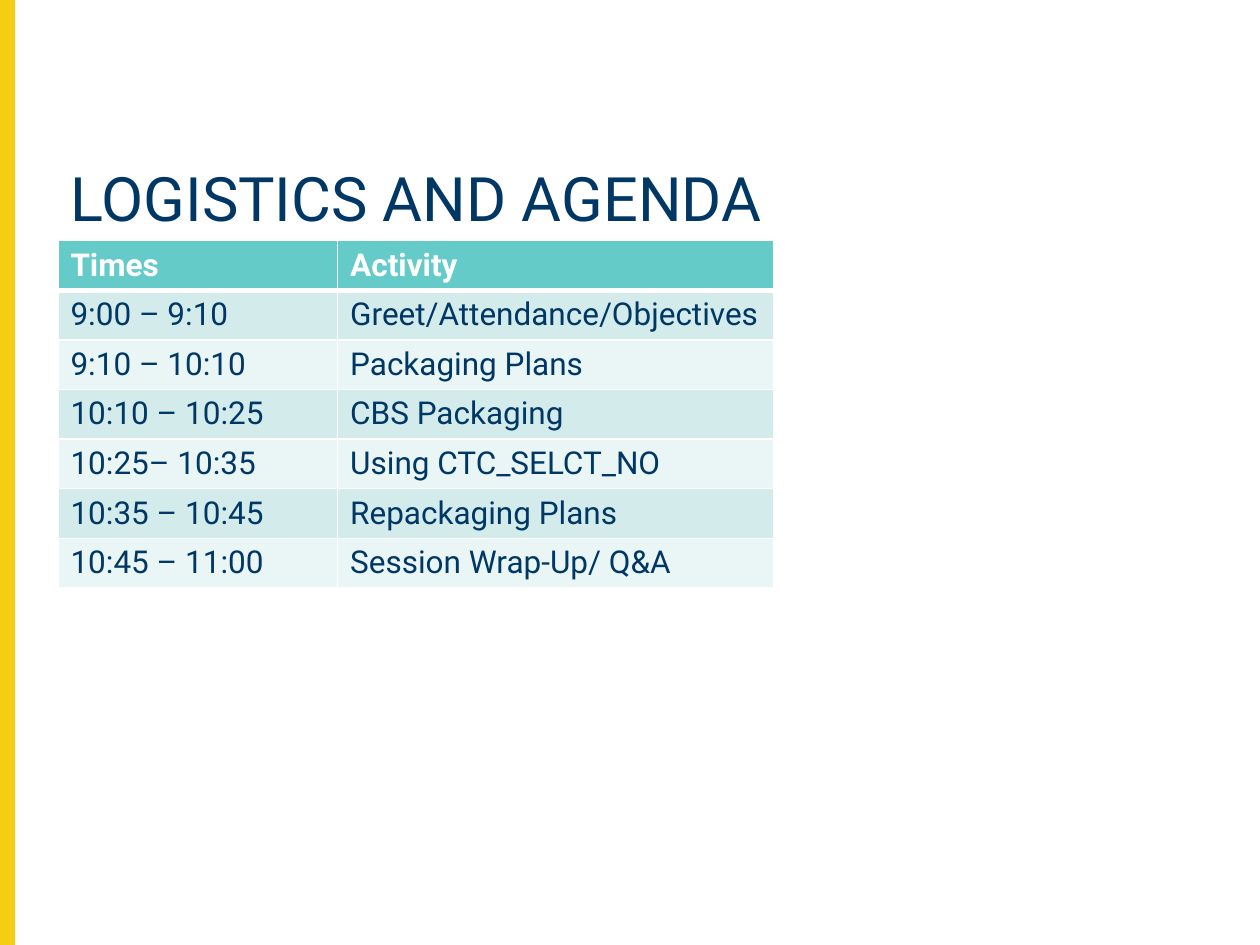
from dataclasses import dataclass

from lxml.etree import SubElement
from pptx import Presentation
from pptx.dml.color import RGBColor
from pptx.enum.shapes import MSO_SHAPE
from pptx.enum.text import MSO_ANCHOR, MSO_AUTO_SIZE, PP_ALIGN
from pptx.oxml.ns import qn
from pptx.util import Inches, Pt


@dataclass(frozen=True)
class Theme:
    """Colours, font and type sizes."""
    navy: str = "003764"
    gold: str = "F4CE12"
    teal: str = "65CBC9"
    white: str = "FFFFFF"
    bands: tuple = ("D3ECEB", "EAF6F5")
    font: str = "Roboto"
    head: int = 35
    body: int = 18


def apply(item, form):
    """Set each attribute of item named in form."""
    for key, value in form.items():
        setattr(item, key, value)


class Deck:
    """Holds the theme and the current slide."""

    def __init__(self, theme):
        """Start a deck with one title slide."""
        self.theme = theme
        self.show = Presentation()
        apply(self.show, {"slide_width": Inches(10), "slide_height": Inches(7.5)})
        self.slide = self.show.slides.add_slide(self.show.slide_layouts[5])

    def style(self, para, size, color, bold=False):
        """Format the text of a paragraph."""
        apply(para.font, {"name": self.theme.font, "size": Pt(size), "bold": bold})
        para.font.color.rgb = RGBColor.from_string(color)

    def bar(self, *box):
        """Draw the gold side bar."""
        bar = self.slide.shapes.add_shape(MSO_SHAPE.RECTANGLE, *map(Inches, box))
        gold = RGBColor.from_string(self.theme.gold)
        bar.shadow.inherit = False
        bar.fill.solid()
        bar.fill.fore_color.rgb = gold
        bar.line.color.rgb = gold
        bar.line.width = Pt(1)

    def title(self, text, *box):
        """Fill and place the title."""
        title = self.slide.shapes.title
        apply(title, dict(zip(("left", "top", "width", "height"), map(Inches, box))))
        frame = title.text_frame
        frame.text = text
        apply(frame, {"word_wrap": True, "auto_size": MSO_AUTO_SIZE.NONE,
                      "vertical_anchor": MSO_ANCHOR.TOP, "margin_top": Inches(0.09)})
        para = frame.paragraphs[0]
        apply(para, {"alignment": PP_ALIGN.LEFT, "line_spacing": 0.9})
        self.style(para, self.theme.head, self.theme.navy)

    def edge(self, cell, side, width):
        """Add one white border to a cell."""
        line = SubElement(cell._tc.get_or_add_tcPr(), qn(f"a:ln{side}"), w=str(Pt(width)))
        fill = SubElement(line, qn("a:solidFill"))
        SubElement(fill, qn("a:srgbClr"), val=self.theme.white)

    def cell(self, cell, text, row):
        """Write and colour one table cell."""
        theme, top = self.theme, row == 0
        cell.text = text
        self.style(cell.text_frame.paragraphs[0], theme.body,
                   theme.white if top else theme.navy, top)
        for side in "LRTB":
            thick = (top and side == "B") or (row == 1 and side == "T")
            self.edge(cell, side, 3 if thick else 1)
        cell.fill.solid()
        tint = theme.teal if top else theme.bands[(row - 1) % 2]
        cell.fill.fore_color.rgb = RGBColor.from_string(tint)

    def table(self, rows, left, top, widths, height):
        """Build a table with a header and banded rows."""
        box = map(Inches, (left, top, sum(widths), height * len(rows)))
        grid = self.slide.shapes.add_table(len(rows), len(widths), *box).table
        for col, width in zip(grid.columns, widths):
            col.width = Inches(width)
        for row, texts in enumerate(rows):
            for col, text in enumerate(texts):
                self.cell(grid.cell(row, col), text, row)


AGENDA = [
    ("Times", "Activity"),
    ("9:00 – 9:10", "Greet/Attendance/Objectives"),
    ("9:10 – 10:10", "Packaging Plans"),
    ("10:10 – 10:25", "CBS Packaging"),
    ("10:25– 10:35", "Using CTC_SELCT_NO"),
    ("10:35 – 10:45", "Repackaging Plans"),
    ("10:45 – 11:00", "Session Wrap-Up/ Q&A"),
]


def main():
    """Build and save the agenda slide."""
    deck = Deck(Theme())
    deck.bar(0, 0, 0.11, 7.5)
    deck.title("LOGISTICS AND AGENDA", 0.46, 1.25, 9.33, 0.79)
    deck.table(AGENDA, 0.46, 1.91, (2.22, 3.46), 0.37)
    deck.show.save("out.pptx")


if __name__ == "__main__":
    main()
